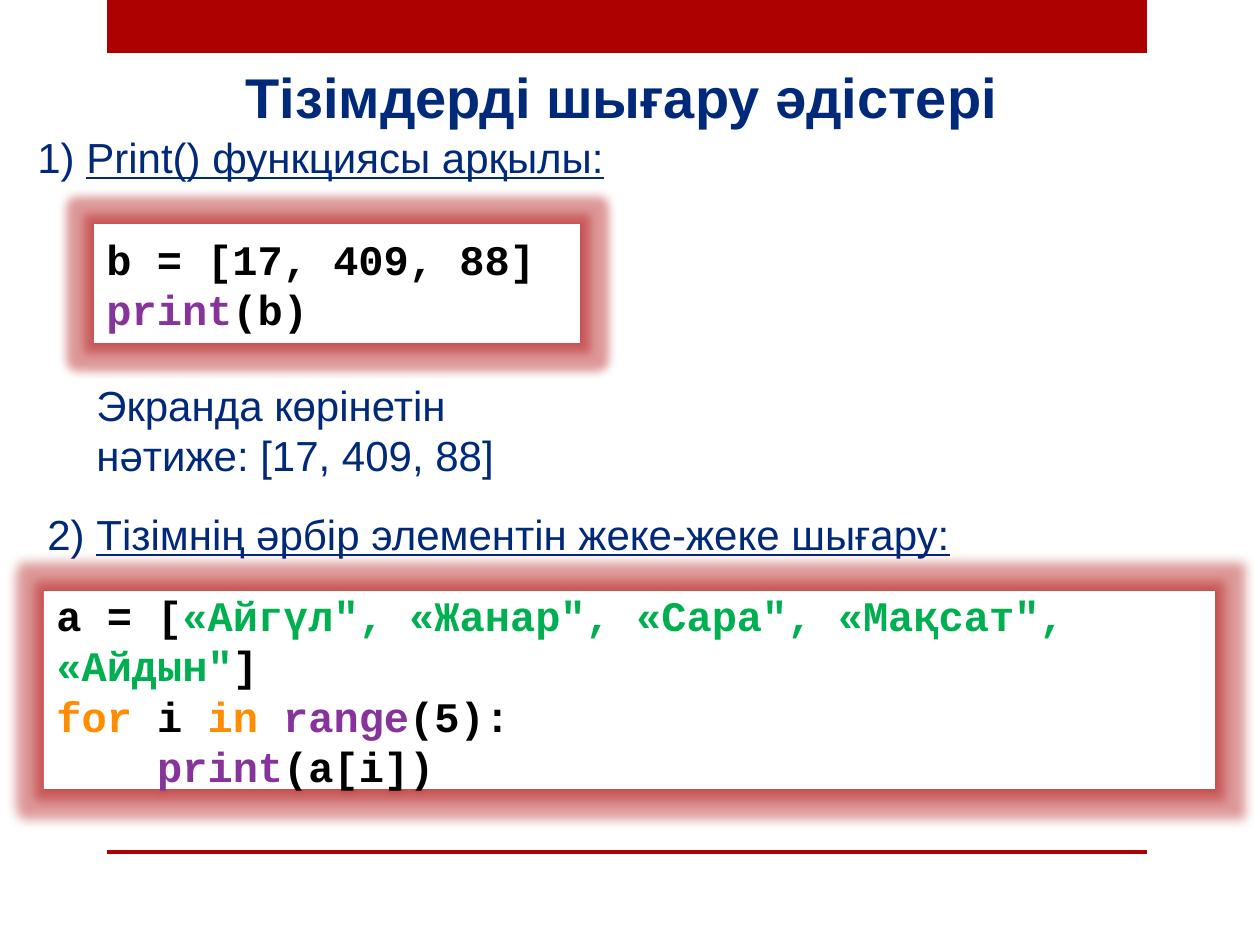
from lxml import etree
from pptx import Presentation
from pptx import util as u
from pptx.dml.color import RGBColor
from pptx.enum import shapes, text
from pptx.oxml import ns

PX = 914400 / 126
COLORS = {
    "red": "AD0101", "navy": "00297A", "white": "FFFFFF", "black": "000000",
    "purple": "86349C", "green": "00B050", "orange": "FF8C01",
}


def px(*lengths):
    return [u.Emu(round(length * PX)) for length in lengths]


def add_span(para, words, color="navy", font="Arial", size=24, bold=False, underline=None):
    span = para.add_run()
    span.text = words
    span.font.name = font
    span.font.size = u.Pt(size)
    span.font.bold = bold
    span.font.underline = underline
    span.font.color.rgb = RGBColor.from_string(COLORS[color])


deck = Presentation()
deck.slide_width, deck.slide_height = px(1260, 945)
page = deck.slides.add_slide(deck.slide_layouts[5])

for top, height in [(0, 53), (850, 4)]:
    bar = page.shapes.add_shape(shapes.MSO_SHAPE.RECTANGLE, *px(107, top, 1040, height))
    bar.shadow.inherit = False
    bar.fill.solid()
    bar.fill.fore_color.rgb = RGBColor.from_string(COLORS["red"])
    bar.line.fill.background()

title = page.shapes.title
title.left, title.top, title.width, title.height = px(233, 56, 824, 81)
title.text_frame.word_wrap = True
title.text_frame.auto_size = text.MSO_AUTO_SIZE.NONE
title.text_frame.vertical_anchor = text.MSO_ANCHOR.TOP
title_para = title.text_frame.paragraphs[0]
title_para.alignment = text.PP_ALIGN.LEFT
add_span(title_para, "Тізімдерді шығару әдістері", size=32, bold=True)

notes = [
    ((25, 125, 615, 63), "1) ", "Print() функциясы арқылы:"),
    ((84, 373, 427, 115), "Экранда көрінетін нәтиже: [17, 409, 88]", ""),
    ((35, 502, 1062, 63), "2) ", "Тізімнің әрбір элементін жеке-жеке шығару:"),
]
for place, plain, underlined in notes:
    box = page.shapes.add_textbox(*px(*place))
    box.text_frame.word_wrap = True
    para = box.text_frame.paragraphs[0]
    add_span(para, plain)
    if underlined:
        add_span(para, underlined, underline=True)

listings = [
    ((94, 224, 486, 119), [
        [("b = [17, 409, 88]", "black")],
        [("print", "purple"), ("(b)", "black")],
    ]),
    ((44, 591, 1171, 198), [
        [("a = [", "black"),
         ("«Айгүл\", «Жанар\", «Сара\", «Мақсат\", «Айдын\"", "green"),
         ("]", "black")],
        [("for ", "orange"), ("i ", "black"), ("in ", "orange"),
         ("range", "purple"), ("(5):", "black")],
        [("    ", "black"), ("print", "purple"), ("(a[i])", "black")],
    ]),
]
effects = [
    ("a:glow", {"rad": "139700"}),
    ("a:outerShdw", {"blurRad": "38100", "dist": "0", "algn": "ctr", "rotWithShape": "0"}),
]
for place, lines in listings:
    box = page.shapes.add_shape(shapes.MSO_SHAPE.RECTANGLE, *px(*place))
    box.shadow.inherit = False
    box.fill.solid()
    box.fill.fore_color.rgb = RGBColor.from_string(COLORS["white"])
    box.line.fill.background()
    effect_list = box.element.spPr.find(ns.qn("a:effectLst"))
    for tag, settings in effects:
        effect = etree.SubElement(effect_list, ns.qn(tag), settings)
        color = etree.SubElement(effect, ns.qn("a:srgbClr"), val=COLORS["red"])
        etree.SubElement(color, ns.qn("a:alpha"), val="34000")
    frame = box.text_frame
    frame.word_wrap = True
    frame.vertical_anchor = text.MSO_ANCHOR.MIDDLE
    for index, line in enumerate(lines):
        para = frame.add_paragraph() if index else frame.paragraphs[0]
        para.alignment = text.PP_ALIGN.LEFT
        for words, shade in line:
            add_span(para, words, color=shade, font="Courier New", bold=True)

deck.save("out.pptx")
